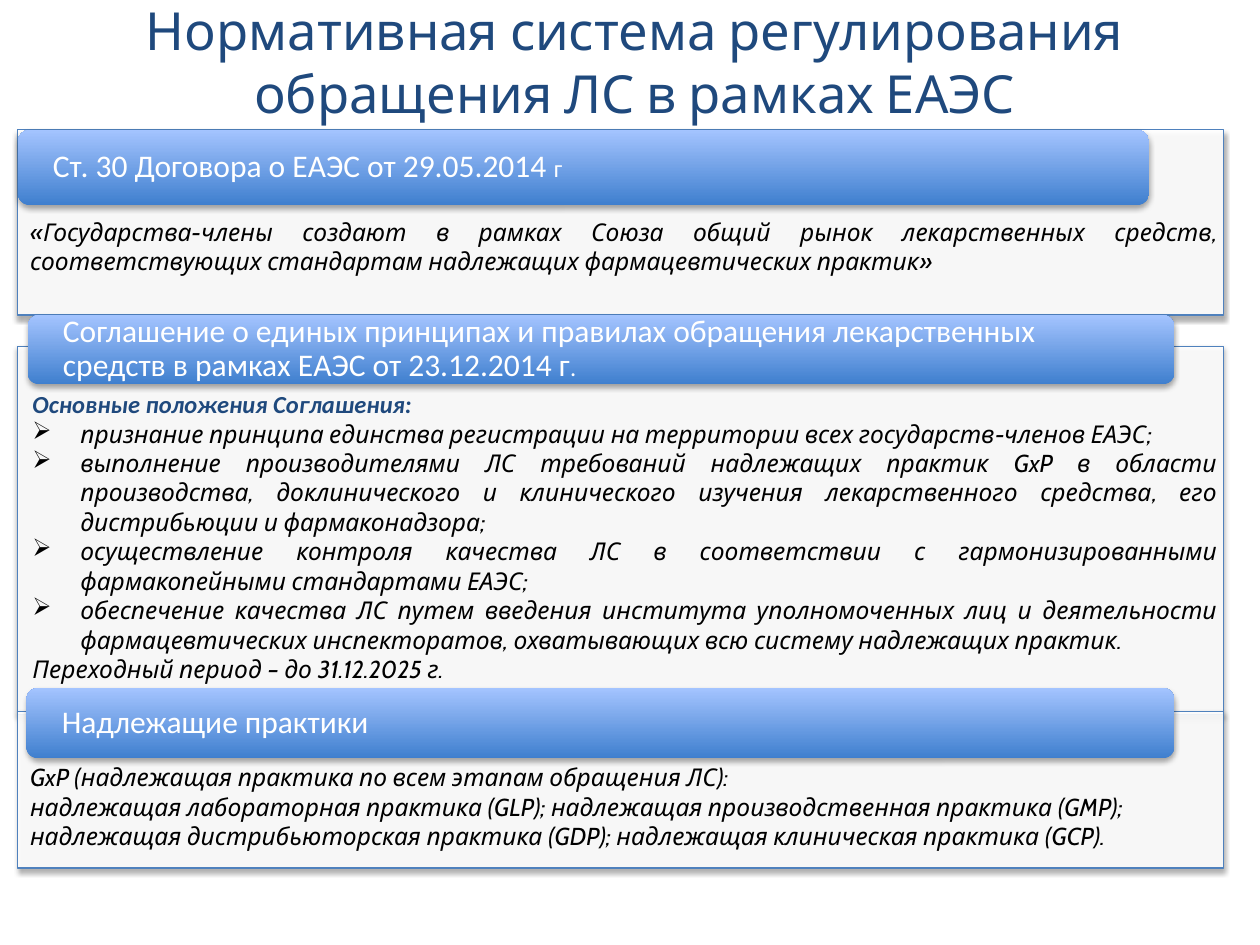
from lxml.etree import SubElement
from pptx import Presentation
from pptx.dml.color import RGBColor
from pptx.enum.shapes import MSO_SHAPE
from pptx.enum.text import MSO_ANCHOR, MSO_AUTO_SIZE, PP_ALIGN
from pptx.oxml.ns import qn
from pptx.util import Inches, Pt


def add_panel(kind, left, top, width, height):
    shape = slide.shapes.add_shape(
        kind, Inches(left), Inches(top), Inches(width), Inches(height))
    shape.shadow.inherit = False
    effects = shape._element.spPr.find(qn("a:effectLst"))
    shadow = SubElement(effects, qn("a:outerShdw"), blurRad=str(Pt(3.1)),
                        dist=str(Pt(1.8)), dir="5400000", rotWithShape="0")
    color = SubElement(shadow, qn("a:srgbClr"), val="000000")
    SubElement(color, qn("a:alpha"), val="35000")
    return shape


def write_text(paragraph, text, size=14, font="Cabin", color="000000",
               bold=False, italic=True, align=PP_ALIGN.JUSTIFY):
    paragraph.alignment = align
    run = paragraph.add_run()
    run.text = text
    run.font.name = font
    run.font.size = Pt(size)
    run.font.bold = bold
    run.font.italic = italic
    run.font.color.rgb = RGBColor.from_string(color)


presentation = Presentation()
presentation.slide_width = Inches(10)
presentation.slide_height = Inches(7.5)
slide = presentation.slides.add_slide(presentation.slide_layouts[6])

title = slide.shapes.add_textbox(Inches(0.04), 0, Inches(10), Inches(0.97))
title.text_frame.word_wrap = True
title.text_frame.vertical_anchor = MSO_ANCHOR.MIDDLE
write_text(title.text_frame.paragraphs[0],
           "Нормативная система регулирования обращения ЛС в рамках ЕАЭС",
           size=30, color="1F497D", italic=False, align=PP_ALIGN.CENTER)

sections = [
    ((1.03, 1.47), (0.14, 1.03, 8.98, 0.6),
     "Ст. 30 Договора о ЕАЭС от 29.05.2014 ", "г"),
    ((2.75, 2.92), (0.22, 2.5, 9.1, 0.55),
     "Соглашение о единых принципах и правилах обращения лекарственных "
     "средств в рамках ЕАЭС от 23.12.2014 г", "."),
    ((5.65, 1.24), (0.21, 5.46, 9.11, 0.56), "Надлежащие практики", ""),
]
inset = 0.03
for (panel_top, panel_height), (left, top, width, height), heading, ending in sections:
    panel = add_panel(MSO_SHAPE.RECTANGLE, 0.14, panel_top, 9.57, panel_height)
    panel.fill.solid()
    panel.fill.fore_color.rgb = RGBColor.from_string("FFFFFF")
    fill_color = panel._element.spPr.find(qn("a:solidFill")).find(qn("a:srgbClr"))
    SubElement(fill_color, qn("a:alpha"), val="90000")
    panel.line.color.rgb = RGBColor.from_string("4F81BD")
    panel.line.width = Pt(0.75)

    bar = add_panel(MSO_SHAPE.ROUNDED_RECTANGLE, left, top, width, height)
    bar.fill.gradient()
    bar.fill.gradient_angle = 90
    for stop, color in zip(bar.fill.gradient_stops, ("3F7FCE", "A4C4FF")):
        stop.color.rgb = RGBColor.from_string(color)
    bar.line.fill.background()

    label = slide.shapes.add_textbox(
        Inches(left + inset), Inches(top + inset),
        Inches(width - 2 * inset), Inches(height - 2 * inset))
    frame = label.text_frame
    frame.word_wrap = True
    frame.vertical_anchor = MSO_ANCHOR.MIDDLE
    frame.margin_left = frame.margin_right = Inches(0.25)
    frame.margin_top = frame.margin_bottom = 0
    paragraph = frame.paragraphs[0]
    paragraph.line_spacing = 0.9
    for text, size in ((heading, 18), (ending, 14)):
        if text:
            write_text(paragraph, text, size=size, font="Calibri",
                       color="FFFFFF", italic=False, align=PP_ALIGN.LEFT)

plain = {}
bullet = {"bullet": "➢"}
lead = {"font": "Calibri", "color": "1F497D", "bold": True, "align": PP_ALIGN.LEFT}
bodies = [
    ((0.14, 1.67, 9.62, 0.57), [
        ("«Государства-члены создают в рамках Союза общий рынок лекарственных средств, "
         "соответствующих стандартам надлежащих фармацевтических практик»", plain),
    ]),
    ((0.16, 3.04, 9.6, 2.46), [
        ("Основные положения Соглашения:", lead),
        ("признание принципа единства регистрации на территории всех "
         "государств-членов ЕАЭС;", bullet),
        ("выполнение производителями ЛС требований надлежащих практик GxP в области "
         "производства, доклинического и клинического изучения лекарственного средства, "
         "его дистрибьюции и фармаконадзора;", bullet),
        ("осуществление контроля качества ЛС в соответствии с гармонизированными "
         "фармакопейными стандартами ЕАЭС;", bullet),
        ("обеспечение качества ЛС путем введения института уполномоченных лиц и "
         "деятельности фармацевтических инспекторатов, охватывающих всю систему "
         "надлежащих практик.", bullet),
        ("Переходный период – до 31.12.2025 г.", plain),
    ]),
    ((0.14, 6, 9.57, 0.81), [
        ("GxP (надлежащая практика по всем этапам обращения ЛС):", plain),
        ("надлежащая лабораторная практика (GLP); "
         "надлежащая производственная практика (GMP);", plain),
        ("надлежащая дистрибьюторская практика (GDP); "
         "надлежащая клиническая практика (GCP).", plain),
    ]),
]
for position, lines in bodies:
    body = slide.shapes.add_textbox(*[Inches(value) for value in position])
    frame = body.text_frame
    frame.word_wrap = True
    frame.auto_size = MSO_AUTO_SIZE.SHAPE_TO_FIT_TEXT
    for index, (text, style) in enumerate(lines):
        paragraph = frame.add_paragraph() if index else frame.paragraphs[0]
        if style is bullet:
            properties = paragraph._p.get_or_add_pPr()
            properties.set("marL", str(Inches(0.38)))
            properties.set("indent", str(Inches(-0.38)))
            SubElement(properties, qn("a:buChar"), char=bullet["bullet"])
            write_text(paragraph, text)
        else:
            write_text(paragraph, text, **style)

presentation.save("out.pptx")
